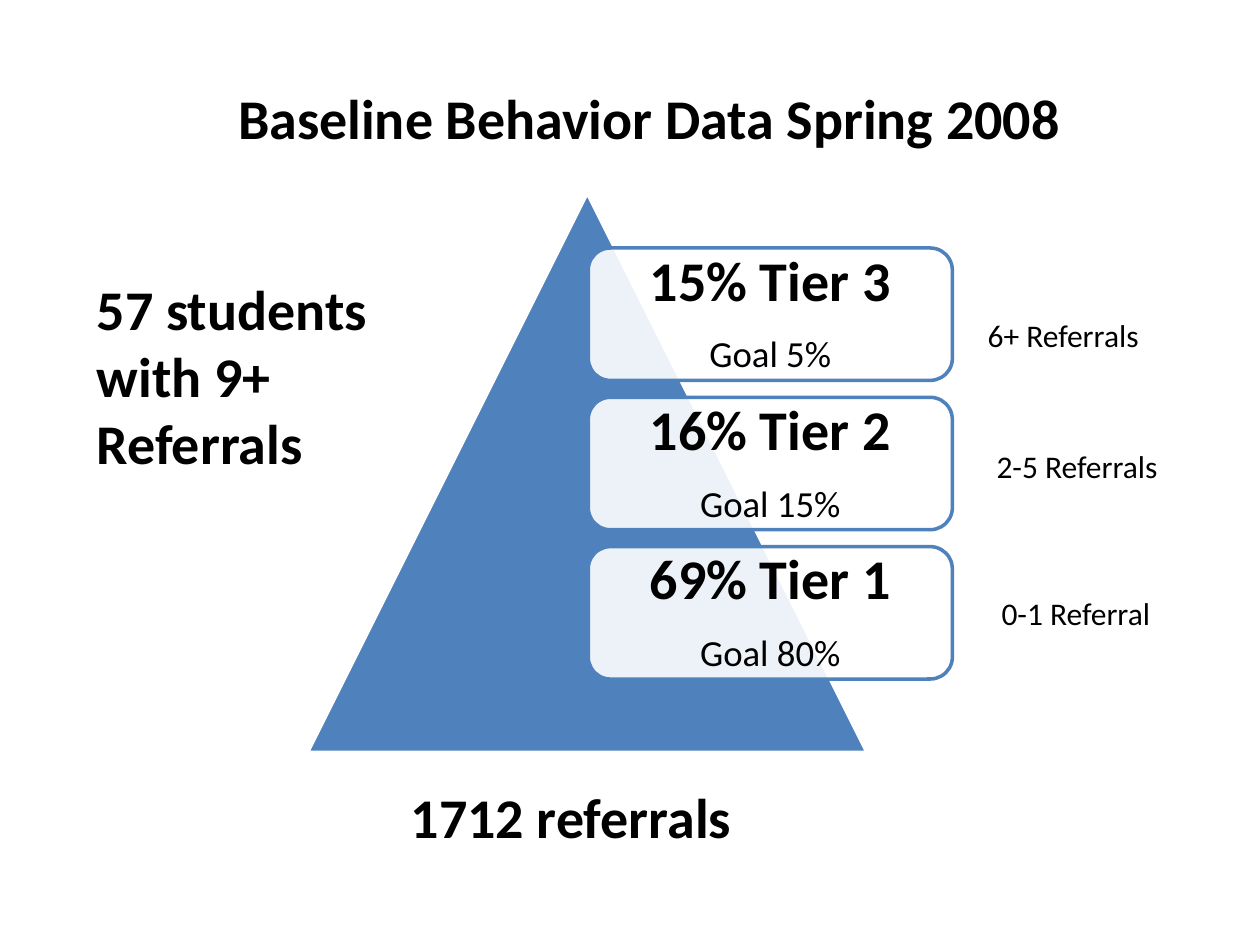
"""Build the tier pyramid slide of baseline behavior data."""
from dataclasses import dataclass

from lxml import etree
from pptx import Presentation
from pptx.dml.color import RGBColor
from pptx.enum.shapes import MSO_SHAPE
from pptx.enum.text import MSO_ANCHOR, MSO_AUTO_SIZE, PP_ALIGN
from pptx.oxml.ns import qn
from pptx.util import Cm, Pt

TRIANGLE = MSO_SHAPE.ISOSCELES_TRIANGLE
ROUNDED = MSO_SHAPE.ROUNDED_RECTANGLE
MIDDLE = MSO_ANCHOR.MIDDLE
FIT_TEXT = MSO_AUTO_SIZE.SHAPE_TO_FIT_TEXT
LEFT = PP_ALIGN.LEFT
CENTER = PP_ALIGN.CENTER


@dataclass(frozen=True)
class Theme:
    font: str = "Calibri"
    ink: RGBColor = RGBColor(0, 0, 0)
    paper: RGBColor = RGBColor(255, 255, 255)
    accent: RGBColor = RGBColor(0x4F, 0x81, 0xBD)
    heading: int = 32
    goal: int = 21
    label: int = 18
    outline: int = 2
    card_opacity: int = 90


def format_text(para, text, *, theme, size, bold=False, align=LEFT,
                line_spacing=None, space_after=None):
    para.alignment = align
    if line_spacing is not None:
        para.line_spacing = line_spacing
    if space_after is not None:
        para.space_after = Pt(space_after)
    span = para.add_run()
    span.text = text
    span.font.name = theme.font
    span.font.size = Pt(size)
    span.font.bold = bold
    span.font.color.rgb = theme.ink


class Painter:
    def __init__(self, page, theme):
        self.page = page
        self.theme = theme

    def shape(self, kind, left, top, width, height, fill, line):
        shape = self.page.shapes.add_shape(
            kind, Cm(left), Cm(top), Cm(width), Cm(height))
        shape.shadow.inherit = False
        shape.fill.solid()
        shape.fill.fore_color.rgb = fill
        shape.line.color.rgb = line
        shape.line.width = Pt(self.theme.outline)
        return shape

    def pyramid(self, left, top, size):
        self.shape(TRIANGLE, left, top, size, size,
                   self.theme.accent, self.theme.paper)

    def card(self, left, top, width, height, tier, goal):
        theme = self.theme
        card = self.shape(ROUNDED, left, top, width, height,
                          theme.paper, theme.accent)
        color = card.fill._xPr.find(qn("a:solidFill"))[0]
        etree.SubElement(color, qn("a:alpha"),
                         val=str(theme.card_opacity * 1000))
        frame = card.text_frame
        frame.word_wrap = True
        frame.vertical_anchor = MIDDLE
        frame.margin_left = frame.margin_right = Cm(0.33)
        frame.margin_top = frame.margin_bottom = Cm(0.33)
        format_text(frame.paragraphs[0], tier, theme=theme, bold=True,
                    size=theme.heading, align=CENTER,
                    line_spacing=0.9, space_after=13)
        format_text(frame.add_paragraph(), goal, theme=theme,
                    size=theme.goal, align=CENTER, line_spacing=0.9)

    def text(self, left, top, width, height, text, **style):
        box = self.page.shapes.add_textbox(
            Cm(left), Cm(top), Cm(width), Cm(height))
        frame = box.text_frame
        frame.word_wrap = True
        frame.auto_size = FIT_TEXT
        format_text(frame.paragraphs[0], text, theme=self.theme, **style)

    def heading(self, left, top, width, height, text, align=LEFT):
        self.text(left, top, width, height, text,
                  size=self.theme.heading, bold=True, align=align)

    def label(self, left, top, text):
        self.text(left, top, 4.29, 1.02, text, size=self.theme.label)


def main():
    deck = Presentation()
    deck.slide_width, deck.slide_height = Cm(25.4), Cm(19.05)
    page = deck.slides.add_slide(deck.slide_layouts[6])
    painter = Painter(page, Theme())

    painter.pyramid(6.2, 3.89, 11.28)
    tiers = [
        ("15% Tier 3", "Goal 5%"),
        ("16% Tier 2", "Goal 15%"),
        ("69% Tier 1", "Goal 80%"),
    ]
    for row, (tier, goal) in enumerate(tiers):
        painter.card(11.86, 5 + row * 3.01, 7.34, 2.67, tier, goal)

    labels = [
        (19.66, 6.25, "6+ Referrals"),
        (19.84, 8.89, "2-5 Referrals"),
        (19.94, 11.86, "0-1 Referral"),
    ]
    for left, top, text in labels:
        painter.label(left, top, text)

    painter.heading(1.7, 5.41, 7.95, 4.37, "57 students with 9+ Referrals")
    painter.heading(8.03, 15.65, 7.44, 1.63, "1712 referrals")
    painter.heading(3.33, 1.55, 19.53, 1.63,
                    "Baseline Behavior Data Spring 2008", align=CENTER)
    deck.save("out.pptx")


if __name__ == "__main__":
    main()
